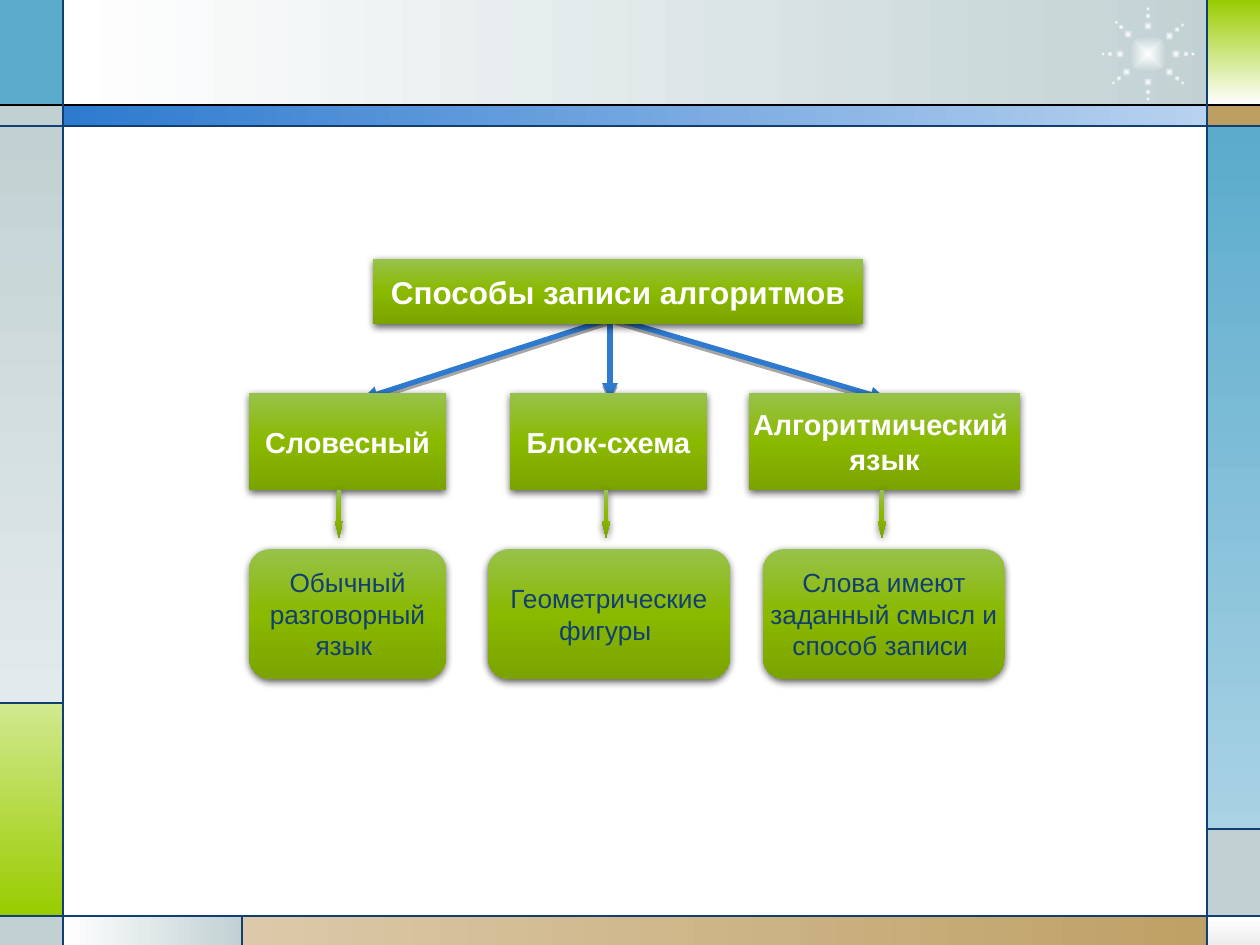
"""Build a slide with a tree diagram of the ways to write down algorithms."""
from math import cos, radians, sin

from pptx import Presentation
from pptx.dml.color import RGBColor
from pptx.enum.shapes import MSO_CONNECTOR, MSO_SHAPE
from pptx.enum.text import MSO_ANCHOR, PP_ALIGN
from pptx.oxml import parse_xml
from pptx.oxml.ns import nsdecls, qn
from pptx.util import Pt

RECTANGLE = MSO_SHAPE.RECTANGLE
ROUNDED = MSO_SHAPE.ROUNDED_RECTANGLE
OVAL = MSO_SHAPE.OVAL
DOWN_ARROW = MSO_SHAPE.DOWN_ARROW
STRAIGHT = MSO_CONNECTOR.STRAIGHT
MIDDLE = MSO_ANCHOR.MIDDLE
CENTER = PP_ALIGN.CENTER

PX = 914400 / 126
COLORS = {
    "white": "FFFFFF", "black": "000000", "navy": "113F71", "blue": "2D7ACF",
    "pale_blue": "B8D2EF", "sky": "5AABCC", "pale_sky": "A9D2E4",
    "gray": "C1D1D3", "pale_gray": "E3EAEB", "silver": "EDEDED",
    "lime": "99CC00", "pale_lime": "D1E98F", "tan": "BD9E61", "pale_tan": "DCC9A9",
    "leaf_top": "97C24B", "leaf": "8AB900", "leaf_bottom": "7BA400",
}
LEAF = ["leaf_top", "leaf", "leaf_bottom"]

presentation = Presentation()
presentation.slide_width = round(1260 * PX)
presentation.slide_height = round(945 * PX)
slide = presentation.slides.add_slide(presentation.slide_layouts[6])


def add_filled(kind, box, names, direction='<a:lin ang="5400000" scaled="0"/>'):
    shape = slide.shapes.add_shape(kind, *[round(length * PX) for length in box])
    shape.shadow.inherit = False
    shape.line.fill.background()
    if len(names) == 1:
        shape.fill.solid()
        shape.fill.fore_color.rgb = RGBColor.from_string(COLORS[names[0]])
        return shape
    shape.fill.gradient()
    stops = "".join(
        f'<a:gs pos="{100000 * index // (len(names) - 1)}"><a:srgbClr val="{COLORS[name]}"/></a:gs>'
        for index, name in enumerate(names))
    properties = shape._element.spPr
    properties.replace(properties.find(qn("a:gradFill")), parse_xml(
        f'<a:gradFill {nsdecls("a")} rotWithShape="1"><a:gsLst>{stops}</a:gsLst>{direction}</a:gradFill>'))
    return shape


def add_shadow(shape, opacity, blur, distance):
    properties = shape._element.spPr
    effects = properties.find(qn("a:effectLst"))
    if effects is not None:
        properties.remove(effects)
    properties.append(parse_xml(
        f'<a:effectLst {nsdecls("a")}><a:outerShdw blurRad="{Pt(blur)}" dist="{Pt(distance)}" '
        f'dir="5400000" rotWithShape="0"><a:srgbClr val="{COLORS["black"]}">'
        f'<a:alpha val="{opacity * 1000}"/></a:srgbClr></a:outerShdw></a:effectLst>'))


ACROSS = '<a:lin ang="0" scaled="0"/>'
DOWN = '<a:lin ang="5400000" scaled="0"/>'
FROM_CENTER = '<a:path path="shape"><a:fillToRect l="50000" t="50000" r="50000" b="50000"/></a:path>'

frame_panels = [
    ((63, 0, 1168, 105), ["white", "gray"], ACROSS),
    ((0, 0, 63, 105), ["sky"], DOWN),
    ((0, 105, 63, 21), ["gray"], DOWN),
    ((0, 126, 63, 577), ["gray", "pale_gray"], DOWN),
    ((0, 703, 63, 213), ["pale_lime", "lime"], DOWN),
    ((0, 916, 63, 29), ["gray"], DOWN),
    ((63, 916, 179, 29), ["white", "gray"], ACROSS),
    ((242, 916, 1018, 29), ["pale_tan", "tan"], ACROSS),
    ((1208, 916, 52, 29), ["white", "silver"], DOWN),
    ((1208, 829, 52, 87), ["gray"], DOWN),
    ((1208, 126, 52, 703), ["sky", "pale_sky"], DOWN),
    ((1208, 105, 52, 21), ["tan"], DOWN),
    ((1208, 0, 52, 105), ["lime", "white"], DOWN),
    ((63, 105, 1145, 21), ["blue", "pale_blue"], ACROSS),
]
for box, names, direction in frame_panels:
    add_filled(RECTANGLE, box, names, direction)

star_x, star_y = 1148, 54
add_filled(OVAL, (star_x - 19, star_y - 19, 38, 38), ["white", "gray"], FROM_CENTER)
for angle in (0, 40, 90, 140, 180, 225, 270, 320):
    for radius, size in ((28, 9), (38, 6), (45, 4)):
        left = star_x + radius * cos(radians(angle)) - size / 2
        top = star_y + radius * sin(radians(angle)) - size / 2
        add_filled(OVAL, (left, top, size, size), ["white", "gray"], FROM_CENTER)

frame_lines = [
    (0, 105, 1260, 105, "black"), (0, 126, 1260, 126, "navy"),
    (0, 916, 1260, 916, "navy"), (63, 0, 63, 945, "navy"),
    (1207, 0, 1207, 945, "navy"), (63, 703, 0, 703, "navy"),
    (242, 916, 242, 945, "navy"), (1207, 829, 1260, 829, "navy"),
]
for *ends, name in frame_lines:
    line = slide.shapes.add_connector(STRAIGHT, *[round(end * PX) for end in ends])
    line.line.color.rgb = RGBColor.from_string(COLORS[name])
    line.line.width = Pt(0.75)
    line._element.spPr.append(parse_xml(f'<a:effectLst {nsdecls("a")}/>'))

for start_x, end_x in ((362, 610), (886, 615), (610, 610)):
    branch = slide.shapes.add_connector(
        STRAIGHT, *[round(end * PX) for end in (start_x, 399, end_x, 319)])
    branch.line.color.rgb = RGBColor.from_string(COLORS["blue"])
    branch.line.width = Pt(3)
    branch.line._get_or_add_ln().append(parse_xml(f'<a:headEnd {nsdecls("a")} type="triangle"/>'))
    add_shadow(branch, 35, 0, 1.8)

diagram_boxes = [
    (RECTANGLE, (749, 393, 271, 97), 16.5, ["Алгоритмический ", "язык"]),
    (RECTANGLE, (249, 393, 197, 97), 16.5, ["Словесный"]),
    (RECTANGLE, (510, 393, 197, 97), 16.5, ["Блок-схема"]),
    (RECTANGLE, (373, 259, 490, 65), 18, ["Способы записи алгоритмов"]),
    (ROUNDED, (249, 549, 197, 130), 15, ["Обычный", "разговорный", "язык "]),
    (ROUNDED, (488, 549, 242, 130), 15, ["Геометрические", "фигуры "]),
    (ROUNDED, (763, 549, 242, 130), 15, ["Слова имеют", "заданный смысл и", "способ записи "]),
]
for kind, box, size, lines in diagram_boxes:
    shape = add_filled(kind, box, LEAF)
    add_shadow(shape, 63, 4.5, 1.5)
    text_frame = shape.text_frame
    text_frame.word_wrap = False
    text_frame.vertical_anchor = MIDDLE
    for index, text in enumerate(lines):
        paragraph = text_frame.add_paragraph() if index else text_frame.paragraphs[0]
        paragraph.alignment = CENTER
        run = paragraph.add_run()
        run.text = text
        run.font.name = "Arial"
        run.font.size = Pt(size)
        run.font.bold = kind == RECTANGLE
        run.font.color.rgb = RGBColor.from_string(COLORS["white" if kind == RECTANGLE else "navy"])

for center_x in (339, 606, 882):
    arrow = add_filled(DOWN_ARROW, (center_x - 4, 490, 8, 48), LEAF)
    arrow.adjustments[0] = 0.5
    arrow.adjustments[1] = 2.02
    add_shadow(arrow, 63, 4.5, 1.5)

presentation.save("out.pptx")
